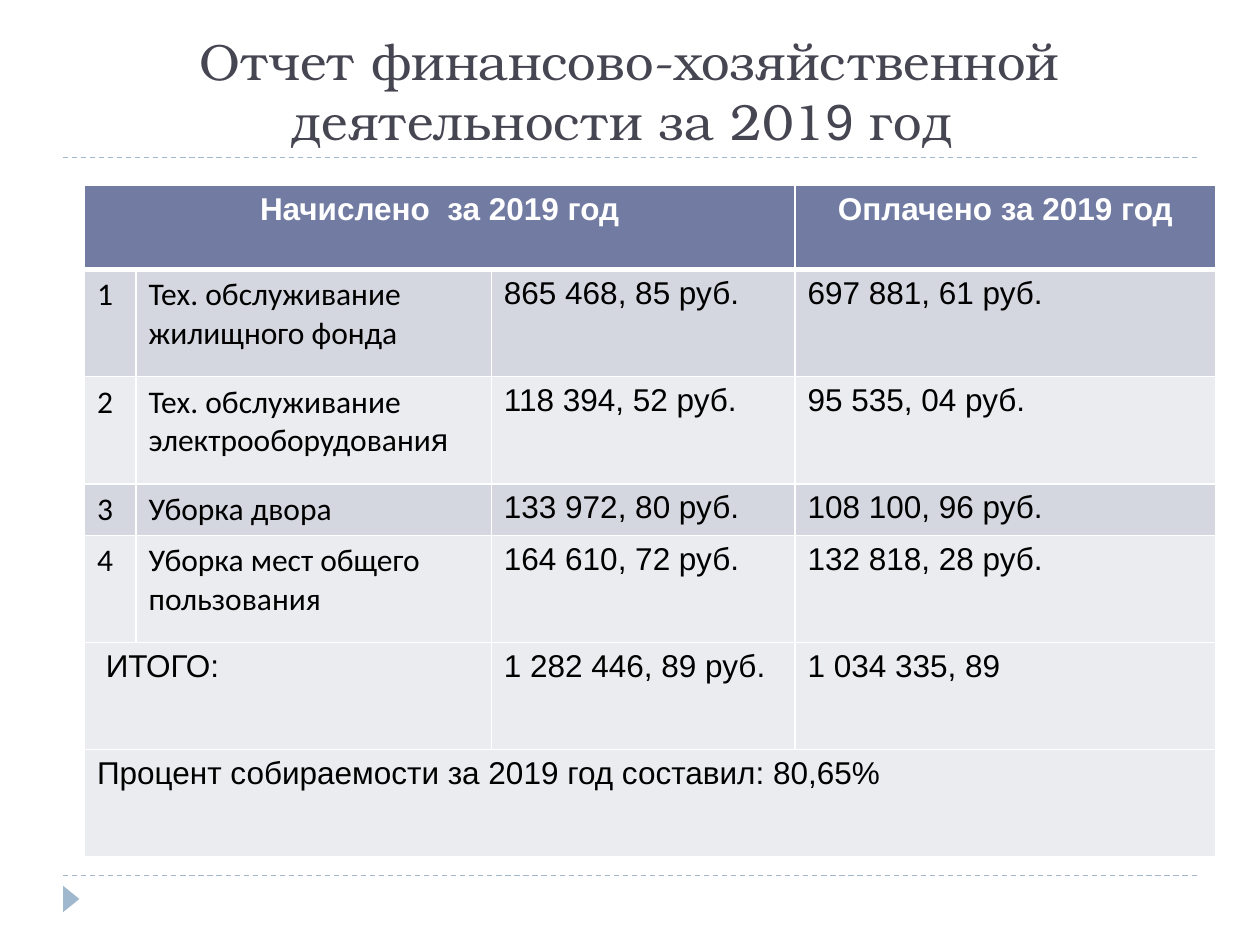
from lxml import etree
from pptx import Presentation
from pptx.dml.color import RGBColor
from pptx.enum.dml import MSO_LINE
from pptx.enum.shapes import MSO_CONNECTOR, MSO_SHAPE
from pptx.enum.text import MSO_ANCHOR, MSO_AUTO_SIZE, PP_ALIGN
from pptx.oxml.ns import qn
from pptx.util import Inches, Pt

DASH = MSO_LINE.DASH
LINE = MSO_CONNECTOR.STRAIGHT
ARROW = MSO_SHAPE.ISOSCELES_TRIANGLE
LEFT, MID = PP_ALIGN.LEFT, PP_ALIGN.CENTER
BASE = MSO_ANCHOR.BOTTOM
FIXED = MSO_AUTO_SIZE.NONE

WIDE, HIGH = 10, 7.5
HEAD = ["Начислено  за 2019 год", "", "", "Оплачено за 2019 год"]
ITEMS = [
    ["1", "Тех. обслуживание жилищного фонда", "865 468, 85 руб.", "697 881, 61 руб."],
    ["2", ["Тех. обслуживание электрооборудовани", ("я", "Arial")], "118 394, 52 руб.", "95 535, 04 руб."],
    ["3", "Уборка двора", "133 972, 80 руб.", "108 100, 96 руб."],
    ["4", "Уборка мест общего пользования", "164 610, 72 руб.", "132 818, 28 руб."],
]
TOTAL = [" ИТОГО:", "", "1 282 446, 89 руб.", "1 034 335, 89"]
SHARE = ["Процент собираемости за 2019 год составил: 80,65%", "", "", ""]
COLS = [0.41, 2.82, 2.41, 3.34]
ROWS = [0.67, 0.85, 0.85, 0.41, 0.85, 0.85, 0.85]
SPANS = [(0, 0, 2), (5, 0, 1), (6, 0, 3)]


def color(code):
    """Turn a hex string into a colour."""
    return RGBColor.from_string(code)


def write(frame, text, font="Arial", size=18, ink="000000", bold=False, align=LEFT):
    """Write a string, or a list of strings and (string, font) pairs, as one paragraph."""
    para = frame.paragraphs[0]
    para.alignment = align
    for part in [text] if isinstance(text, str) else text:
        words, face = (part, font) if isinstance(part, str) else part
        run = para.add_run()
        run.text = words
        run.font.name = face
        run.font.size = Pt(size)
        run.font.bold = bold
        run.font.color.rgb = color(ink)


def border(cell, top, bottom):
    """Draw white borders of the given top and bottom widths round a cell."""
    props = cell._tc.get_or_add_tcPr()
    sides = {"a:lnL": 1, "a:lnR": 1, "a:lnT": top, "a:lnB": bottom}
    for spot, (tag, width) in enumerate(sides.items()):
        edge = etree.Element(qn(tag), w=str(Pt(width)))
        fill = etree.SubElement(edge, qn("a:solidFill"))
        etree.SubElement(fill, qn("a:srgbClr"), val="FFFFFF")
        props.insert(spot, edge)


class Deck:
    """Hold the style and the current slide."""

    ink, trim, head = "464653", "9FB8CD", "727CA3"
    bands = ["EBECF0", "D5D7E0"]

    def __init__(self):
        """Start a deck with one title-only slide."""
        self.file = Presentation()
        self.file.slide_width, self.file.slide_height = Inches(WIDE), Inches(HIGH)
        self.slide = self.file.slides.add_slide(self.file.slide_layouts[5])
        self.shapes = self.slide.shapes

    def across(self, share):
        """Turn a share of the slide's width into a length."""
        return round(self.file.slide_width * share)

    def down(self, share):
        """Turn a share of the slide's height into a length."""
        return round(self.file.slide_height * share)

    def box(self, left, top, width, height):
        """Turn shares of the slide into a place and size."""
        return self.across(left), self.down(top), self.across(width), self.down(height)

    def title(self, text, place):
        """Place and fill the title."""
        item = self.shapes.title
        item.left, item.top, item.width, item.height = self.box(*place)
        frame = item.text_frame
        frame.word_wrap, frame.auto_size = True, FIXED
        frame.vertical_anchor = BASE
        write(frame, text, font="TeX Gyre Bonum", size=29, ink=self.ink, align=MID)

    def rule(self, top):
        """Draw a dashed line across the slide."""
        y = self.down(top)
        line = self.shapes.add_connector(LINE, self.across(0.05), y, self.across(0.95), y)
        line.line.color.rgb = color(self.trim)
        line.line.width = Pt(0.75)
        line.line.dash_style = DASH
        etree.SubElement(line._element.spPr, qn("a:effectLst"))

    def mark(self, place):
        """Draw the triangle that points right."""
        item = self.shapes.add_shape(ARROW, *self.box(*place))
        item.rotation = 90
        item.shadow.inherit = False
        item.fill.solid()
        item.fill.fore_color.rgb = color(self.trim)
        item.line.fill.background()

    def table(self, rows, left, top):
        """Build the table of charges and payments."""
        place = self.box(left, top, sum(COLS) / WIDE, sum(ROWS) / HIGH)
        grid = self.shapes.add_table(len(ROWS), len(COLS), *place).table
        for col, width in zip(grid.columns, COLS):
            col.width = Inches(width)
        for row, height in zip(grid.rows, ROWS):
            row.height = Inches(height)
        for r, c, last in SPANS:
            grid.cell(r, c).merge(grid.cell(r, last))
        for r, row in enumerate(rows):
            for c, text in enumerate(row):
                self.cell(grid.cell(r, c), text, r, c)

    def cell(self, cell, text, r, c):
        """Style and fill one cell by its row and column."""
        first, listed = r == 0, 1 <= r <= len(ITEMS)
        cell.fill.solid()
        shade = self.bands[r % 2 if listed else 0]
        cell.fill.fore_color.rgb = color(self.head if first else shade)
        border(cell, top=3 if r == 1 else 1, bottom=3 if first else 1)
        if text:
            write(cell.text_frame, text, font="Calibri" if listed and c < 2 else "Arial",
                  ink="FFFFFF" if first else "000000", bold=first,
                  align=MID if first else LEFT)


def main():
    """Build and save the slide."""
    deck = Deck()
    for top in (6.95, 1.25):
        deck.rule(top / HIGH)
    deck.mark((0.046, 7.07 / HIGH, 0.021, 0.13 / HIGH))
    deck.title(["Отчет финансово-хозяйственной деятельности за 201", ("9", "Arial"), " год "],
               (0.05, 0.25 / HIGH, 0.9, 1 / HIGH))
    deck.table([HEAD, *ITEMS, TOTAL, SHARE], 0.067, 1.47 / HIGH)
    deck.file.save("out.pptx")


if __name__ == "__main__":
    main()
